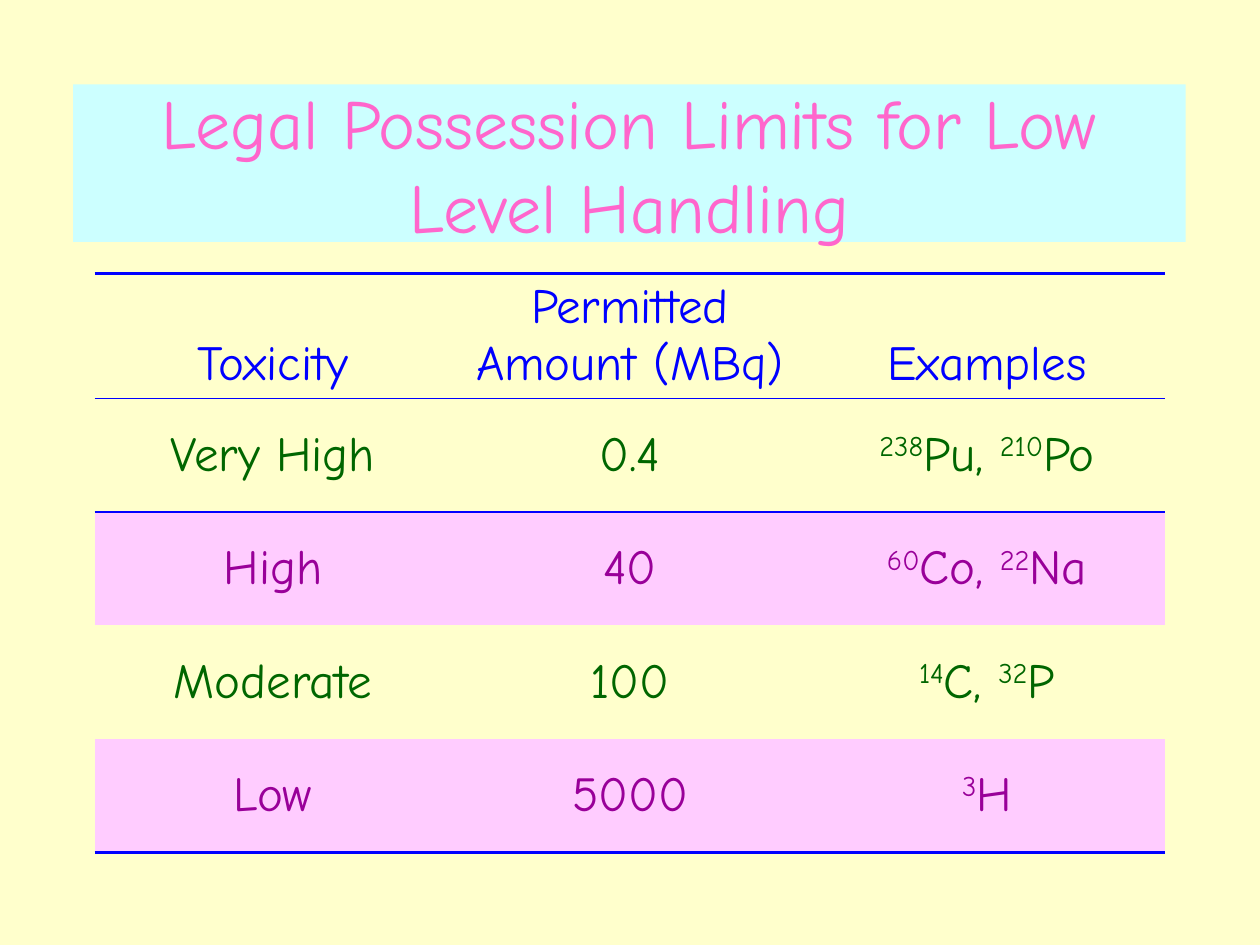
"""Build a slide tabulating legal possession limits by toxicity."""
from typing import NamedTuple

from lxml.etree import SubElement
from pptx import Presentation
from pptx.dml.color import RGBColor
from pptx.enum.shapes import MSO_SHAPE
from pptx.enum.text import MSO_ANCHOR, PP_ALIGN
from pptx.oxml.ns import qn
from pptx.slide import Slide
from pptx.table import Table, _Cell as Cell
from pptx.text.text import _Paragraph as Paragraph
from pptx.util import Inches, Pt

FONT = "Comic Neue"
NO_STYLE = "{2D5ABB26-0587-4C30-8999-92F81FD0307C}"
COLORS = {
    "background": "FFFFCC",
    "title_fill": "CCFFFF",
    "title": "FF66CC",
    "header": "0000FF",
    "plain": "006600",
    "band": "990099",
    "band_fill": "FFCCFF",
}
HEADINGS = ("Toxicity", "Permitted Amount (MBq)", "Examples")
THICK, THIN = 2.25, 1


class Nuclide(NamedTuple):
    mass: str
    symbol: str


class Limit(NamedTuple):
    toxicity: str
    amount: str
    examples: tuple[Nuclide, ...]


LIMITS = (
    Limit("Very High", "0.4", (Nuclide("238", "Pu"), Nuclide("210", "Po"))),
    Limit("High", "40", (Nuclide("60", "Co"), Nuclide("22", "Na"))),
    Limit("Moderate", "100", (Nuclide("14", "C"), Nuclide("32", "P"))),
    Limit("Low", "5000", (Nuclide("3", "H"),)),
)


def color(name: str) -> RGBColor:
    """Return the named colour."""
    return RGBColor.from_string(COLORS[name])


def style_paragraph(paragraph: Paragraph, size: float, color_name: str) -> None:
    """Centre a paragraph and set its font."""
    paragraph.alignment = PP_ALIGN.CENTER
    paragraph.font.name = FONT
    paragraph.font.size = Pt(size)
    paragraph.font.color.rgb = color(color_name)


def add_nuclides(paragraph: Paragraph, nuclides: tuple[Nuclide, ...]) -> None:
    """Write nuclides with raised mass numbers."""
    for index, nuclide in enumerate(nuclides):
        mass = paragraph.add_run()
        mass.text = nuclide.mass
        mass._r.get_or_add_rPr().set("baseline", "30000")
        separator = ", " if index < len(nuclides) - 1 else ""
        paragraph.add_run().text = nuclide.symbol + separator


def add_border(cell: Cell, side: str, width: float) -> None:
    """Draw a header-coloured border on the top (T) or bottom (B) of a cell."""
    properties = cell._tc.get_or_add_tcPr()
    line = SubElement(properties, qn(f"a:ln{side}"), w=str(Pt(width)))
    fill = SubElement(line, qn("a:solidFill"))
    SubElement(fill, qn("a:srgbClr"), val=COLORS["header"])


def add_title(slide: Slide, text: str) -> None:
    """Add the filled title box."""
    shape = slide.shapes.add_shape(
        MSO_SHAPE.RECTANGLE, Inches(0.58), Inches(0.67), Inches(8.83), Inches(1.25)
    )
    shape.shadow.inherit = False
    shape.fill.solid()
    shape.fill.fore_color.rgb = color("title_fill")
    shape.line.fill.background()
    shape.text_frame.word_wrap = True
    shape.text_frame.vertical_anchor = MSO_ANCHOR.MIDDLE
    paragraph = shape.text_frame.paragraphs[0]
    paragraph.text = text
    style_paragraph(paragraph, 40, "title")


def fill_header(table: Table) -> None:
    """Write the headings between a thick and a thin rule."""
    for cell, heading in zip(table.rows[0].cells, HEADINGS):
        add_border(cell, "T", THICK)
        add_border(cell, "B", THIN)
        cell.fill.background()
        cell.vertical_anchor = MSO_ANCHOR.BOTTOM
        paragraph = cell.text_frame.paragraphs[0]
        paragraph.text = heading
        style_paragraph(paragraph, 28, "header")


def fill_limit(table: Table, row: int, limit: Limit) -> None:
    """Write one limit, shading every second row."""
    banded = row % 2 == 0
    for cell, value in zip(table.rows[row].cells, limit):
        if row == 1:
            add_border(cell, "T", THIN)
        if row == len(LIMITS):
            add_border(cell, "B", THICK)
        if banded:
            cell.fill.solid()
            cell.fill.fore_color.rgb = color("band_fill")
        else:
            cell.fill.background()
        cell.vertical_anchor = MSO_ANCHOR.MIDDLE
        paragraph = cell.text_frame.paragraphs[0]
        if isinstance(value, str):
            paragraph.text = value
        else:
            add_nuclides(paragraph, value)
        style_paragraph(paragraph, 28, "band" if banded else "plain")


def add_limits_table(slide: Slide) -> None:
    """Add the table of limits."""
    row_count = len(LIMITS) + 1
    table = slide.shapes.add_table(
        row_count, len(HEADINGS),
        Inches(0.75), Inches(2.17), Inches(8.5), Inches(0.9 * row_count),
    ).table
    table.first_row = table.horz_banding = False
    table._tbl.tblPr.find(qn("a:tableStyleId")).text = NO_STYLE
    fill_header(table)
    for row, limit in enumerate(LIMITS, start=1):
        fill_limit(table, row, limit)


def main() -> None:
    """Build and save the presentation."""
    presentation = Presentation()
    presentation.slide_width = Inches(10)
    presentation.slide_height = Inches(7.5)
    slide = presentation.slides.add_slide(presentation.slide_layouts[6])
    slide.background.fill.solid()
    slide.background.fill.fore_color.rgb = color("background")
    add_title(slide, "Legal Possession Limits for Low Level Handling")
    add_limits_table(slide)
    presentation.save("out.pptx")


if __name__ == "__main__":
    main()
